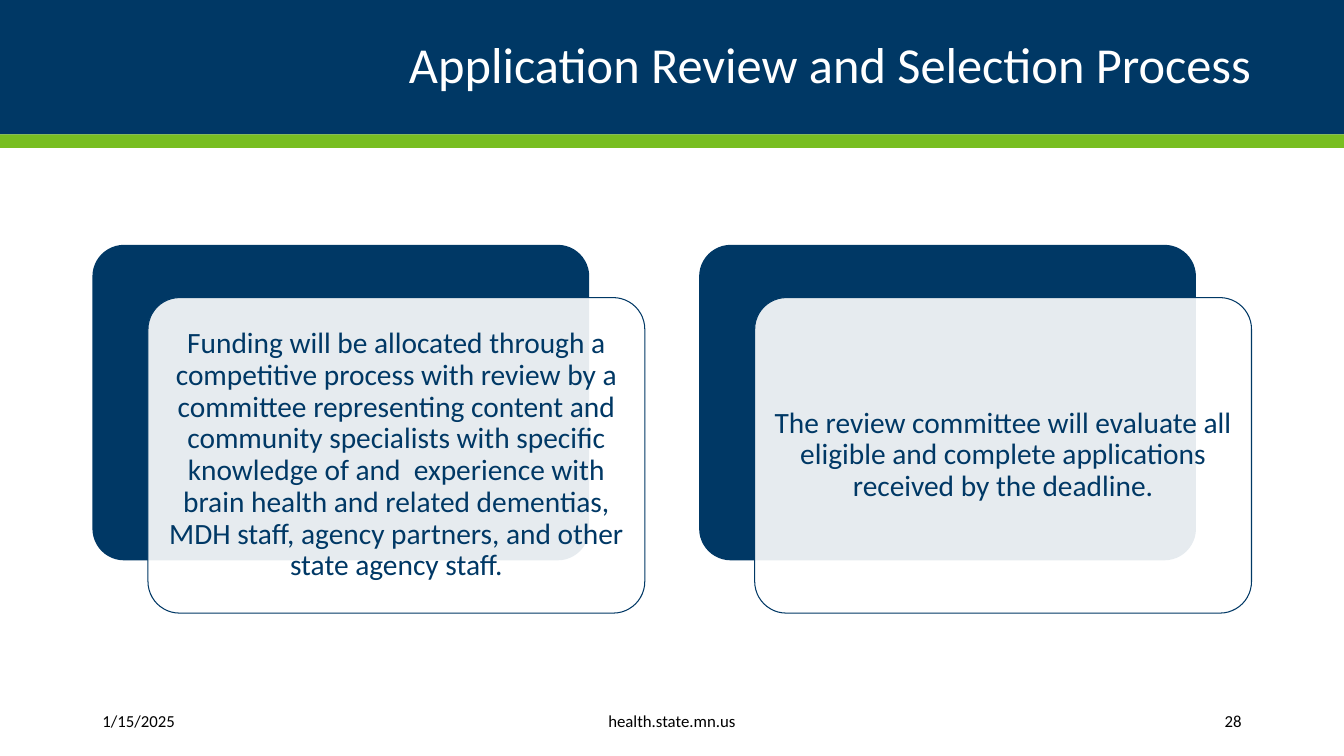
from lxml import etree
from pptx import Presentation
from pptx.dml.color import RGBColor
from pptx.enum.shapes import MSO_SHAPE as Shape
from pptx.enum.text import MSO_ANCHOR as Anchor, PP_ALIGN as Align
from pptx.oxml.ns import qn
from pptx.util import Cm, Pt

NAVY, GREEN, WHITE, BLACK = "003865", "78BE21", "FFFFFF", "000000"
SLIDE_W, SLIDE_H = 33.87, 19.05
MARGIN, CONTENT_W = 2.33, 29.21
HEADER_H, STRIPE_H = 3.39, 0.34
CARD_W, CARD_H = 12.52, 7.95
SHIFT_X, SHIFT_Y = 1.4, 1.33

STEPS = [
    "Funding will be allocated through a competitive process with review by a "
    "committee representing content and community specialists with specific "
    "knowledge of and  experience with brain health and related dementias, MDH "
    "staff, agency partners, and other state agency staff.",
    "The review committee will evaluate all eligible and complete applications "
    "received by the deadline.",
]


def paint(color_format, hex_color):
    """Set a colour from a hex string."""
    color_format.rgb = RGBColor.from_string(hex_color)


def add_panel(slide, kind, box, fill, line=None, opacity=None):
    """Draw a filled shape in a box given in centimetres."""
    panel = slide.shapes.add_shape(kind, *map(Cm, box))
    panel.shadow.inherit = False
    panel.fill.solid()
    paint(panel.fill.fore_color, fill)
    if kind == Shape.ROUNDED_RECTANGLE:
        panel.adjustments[0] = 0.1
    if line:
        paint(panel.line.color, line)
        panel.line.width = Pt(0.75)
    else:
        panel.line.fill.background()
    if opacity is not None:
        fill_color = panel.fill._xPr.find(qn("a:solidFill"))[0]
        etree.SubElement(fill_color, qn("a:alpha")).set("val", str(opacity * 1000))
    return panel


def write(holder, text, size, color, align=Align.LEFT, insets=(0.25, 0.13),
          line_spacing=None, space_after=0):
    """Put one formatted, vertically centred paragraph into a shape."""
    frame = holder.text_frame
    frame.word_wrap = True
    frame.vertical_anchor = Anchor.MIDDLE
    frame.margin_left = frame.margin_right = Cm(insets[0])
    frame.margin_top = frame.margin_bottom = Cm(insets[1])
    paragraph = frame.paragraphs[0]
    paragraph.alignment = align
    paragraph.line_spacing = line_spacing
    paragraph.space_after = Pt(space_after)
    run = paragraph.add_run()
    run.text = text
    run.font.name = "Calibri"
    run.font.size = Pt(size)
    paint(run.font.color, color)


def add_header(slide, left, top, width, height):
    """Draw the navy title band with its green stripe below."""
    add_panel(slide, Shape.RECTANGLE, (left, top, width, height), NAVY)
    add_panel(slide, Shape.RECTANGLE, (left, top + height, width, STRIPE_H), GREEN)
    title = slide.shapes.add_textbox(
        Cm(left + MARGIN), Cm(top), Cm(CONTENT_W), Cm(height))
    write(title, "Application Review and Selection Process", 36, WHITE,
          align=Align.RIGHT, insets=(0, 0.13), line_spacing=0.9)


def add_step(slide, left, top, text):
    """Draw a navy card with a translucent text card shifted over it."""
    add_panel(slide, Shape.ROUNDED_RECTANGLE, (left, top, CARD_W, CARD_H), NAVY)
    card = add_panel(slide, Shape.ROUNDED_RECTANGLE,
                     (left + SHIFT_X, top + SHIFT_Y, CARD_W, CARD_H),
                     WHITE, line=NAVY, opacity=90)
    write(card, text, 21, NAVY, align=Align.CENTER, insets=(0.23, 0.23),
          line_spacing=0.9, space_after=7)


def add_steps(slide, left, top, width):
    """Spread the step cards evenly over the width."""
    pitch = (width - CARD_W - SHIFT_X) / (len(STEPS) - 1)
    for index, text in enumerate(STEPS):
        add_step(slide, left + index * pitch, top, text)


def add_footer(slide, left, top, width, height):
    """Place the date, the site and the page number."""
    date_w, site_w, page_w = 3.78, 15.52, 4.06
    parts = [
        ("1/15/2025", left, date_w, Align.LEFT),
        ("health.state.mn.us", left + (width - site_w) / 2, site_w, Align.CENTER),
        ("28", left + width - page_w, page_w, Align.RIGHT),
    ]
    for text, part_left, part_w, align in parts:
        part = slide.shapes.add_textbox(Cm(part_left), Cm(top), Cm(part_w), Cm(height))
        write(part, text, 12, BLACK, align=align, space_after=6)


def main():
    """Build and save the slide."""
    deck = Presentation()
    deck.slide_width, deck.slide_height = Cm(SLIDE_W), Cm(SLIDE_H)
    slide = deck.slides.add_slide(deck.slide_layouts[6])
    add_header(slide, 0, 0, SLIDE_W, HEADER_H)
    add_steps(slide, MARGIN, 6.17, CONTENT_W)
    add_footer(slide, MARGIN, 17.65, CONTENT_W, 1.02)
    deck.save("out.pptx")


if __name__ == "__main__":
    main()
